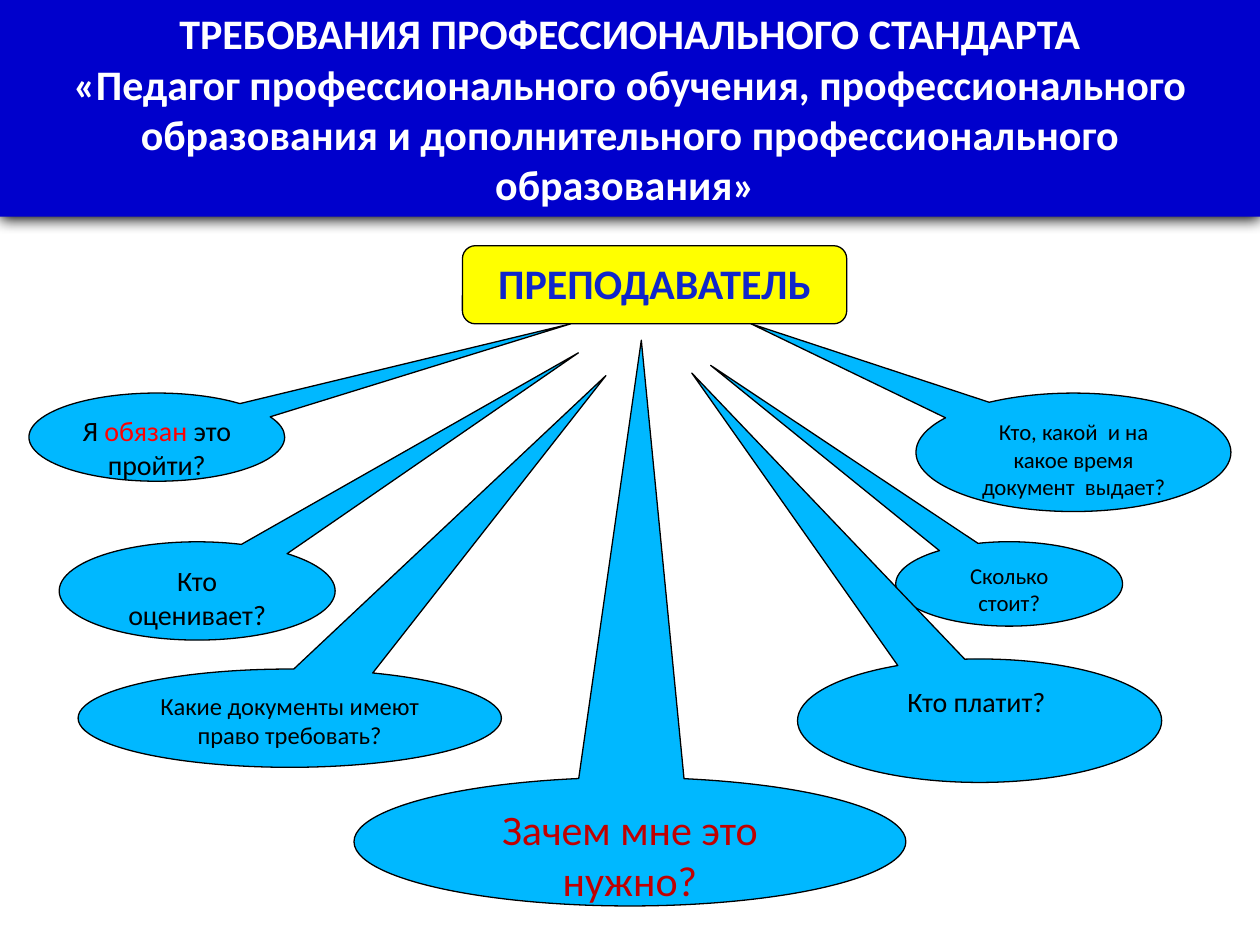
"""Build a slide of questions that point to a teacher under a standard's title."""
from dataclasses import dataclass

import pptx
import pptx.dml.color
import pptx.enum.shapes
import pptx.enum.text
import pptx.oxml
import pptx.oxml.ns
import pptx.util

Inches = pptx.util.Inches
Pt = pptx.util.Pt
SHAPES = pptx.enum.shapes.MSO_SHAPE
ANCHOR = pptx.enum.text.MSO_ANCHOR


@dataclass(frozen=True)
class Theme:
    font: str = "Calibri"
    banner: str = "0000CC"
    banner_text: str = "FFFFFF"
    teacher: str = "FFFF00"
    teacher_text: str = "1026CA"
    callout: str = "00B8FF"
    ink: str = "000000"
    alert: str = "FF0000"
    key: str = "C00000"
    large: int = 24
    medium: int = 16
    small: int = 14
    tiny: int = 13
    outline: float = 0.75


THEME = Theme()

TITLE = (
    "ТРЕБОВАНИЯ ПРОФЕССИОНАЛЬНОГО СТАНДАРТА\n"
    "«Педагог профессионального обучения, профессионального образования "
    "и дополнительного профессионального образования» "
)
TITLE_BOX = (0, 0, 10, 1.72)
TEACHER = "ПРЕПОДАВАТЕЛЬ"
TEACHER_BOX = (3.67, 1.95, 3.05, 0.62)

QUESTIONS = [
    {"box": (0.23, 3.12, 2.03, 0.7), "tip": (4.53, 2.57), "size": THEME.medium,
     "spans": [("Я ", THEME.ink), ("обязан ", THEME.alert), ("это пройти?", THEME.ink)]},
    {"box": (7.27, 3.12, 2.5, 0.94), "tip": (5.96, 2.57), "size": THEME.tiny,
     "spans": [("Кто, какой  и на какое время документ  выдает?", THEME.ink)]},
    {"box": (0.47, 4.3, 2.19, 0.78), "tip": (4.59, 2.8), "size": THEME.medium,
     "spans": [("Кто оценивает?", THEME.ink)]},
    {"box": (7.11, 4.3, 1.8, 0.67), "tip": (5.64, 2.9), "size": THEME.tiny,
     "spans": [("Сколько стоит?", THEME.ink)]},
    {"box": (0.62, 5.31, 3.36, 0.78), "tip": (4.81, 2.98), "size": THEME.small,
     "spans": [("Какие документы имеют право требовать?", THEME.ink)]},
    {"box": (2.81, 6.17, 4.38, 1.02), "tip": (5.09, 2.7), "size": THEME.large,
     "spans": [("Зачем мне это нужно?", THEME.key)]},
    {"box": (6.33, 5.23, 2.89, 0.98), "tip": (5.49, 2.96), "size": THEME.medium,
     "spans": [("Кто платит? ", THEME.ink)]},
]


def rgb(value):
    return pptx.dml.color.RGBColor.from_string(value)


def add_box(page, kind, place, fill, spans, size, bold=False, outlined=True,
            anchor=ANCHOR.TOP, margins=(0.11, 0.06)):
    box = page.shapes.add_shape(kind, *map(Inches, place))
    box.shadow.inherit = False
    box.fill.solid()
    box.fill.fore_color.rgb = rgb(fill)
    if outlined:
        box.line.color.rgb = rgb(THEME.ink)
        box.line.width = Pt(THEME.outline)
    else:
        box.line.fill.background()
    frame = box.text_frame
    frame.word_wrap = True
    frame.vertical_anchor = anchor
    frame.margin_left = frame.margin_right = Inches(margins[0])
    frame.margin_top = frame.margin_bottom = Inches(margins[1])
    para = frame.paragraphs[0]
    para.alignment = pptx.enum.text.PP_ALIGN.CENTER
    para.font.name = THEME.font
    para.font.size = Pt(size)
    para.font.bold = bold
    for text, color in spans:
        for number, line in enumerate(text.split("\n")):
            if number:
                para.add_line_break()
            span = para.add_run()
            span.text = line
            span.font.name = THEME.font
            span.font.size = Pt(size)
            span.font.color.rgb = rgb(color)
    return box


def add_callout(page, question):
    left, top, width, height = question["box"]
    tip_x, tip_y = question["tip"]
    callout = add_box(page, SHAPES.OVAL_CALLOUT, question["box"], THEME.callout,
                      question["spans"], question["size"])
    callout.adjustments[0] = (tip_x - left) / width - 0.5
    callout.adjustments[1] = (tip_y - top) / height - 0.5


def cast_shadow(box, blur, distance):
    effects = box._element.spPr.find(pptx.oxml.ns.qn("a:effectLst"))
    effects.append(pptx.oxml.parse_xml(
        f'<a:outerShdw {pptx.oxml.ns.nsdecls("a")} blurRad="{Pt(blur)}" '
        f'dist="{Pt(distance)}" dir="5400000" algn="ctr" rotWithShape="0">'
        f'<a:srgbClr val="{THEME.ink}"/></a:outerShdw>'))


def main():
    deck = pptx.Presentation()
    deck.slide_width, deck.slide_height = Inches(10), Inches(7.5)
    page = deck.slides.add_slide(deck.slide_layouts[6])
    add_box(page, SHAPES.ROUNDED_RECTANGLE, TEACHER_BOX, THEME.teacher,
            [(TEACHER, THEME.teacher_text)], THEME.large, bold=True)
    for question in QUESTIONS:
        add_callout(page, question)
    banner = add_box(page, SHAPES.RECTANGLE, TITLE_BOX, THEME.banner,
                     [(TITLE, THEME.banner_text)], THEME.large, bold=True,
                     outlined=False, anchor=ANCHOR.MIDDLE, margins=(0.1, 0.05))
    cast_shadow(banner, blur=8.5, distance=1)
    deck.save("out.pptx")


if __name__ == "__main__":
    main()
